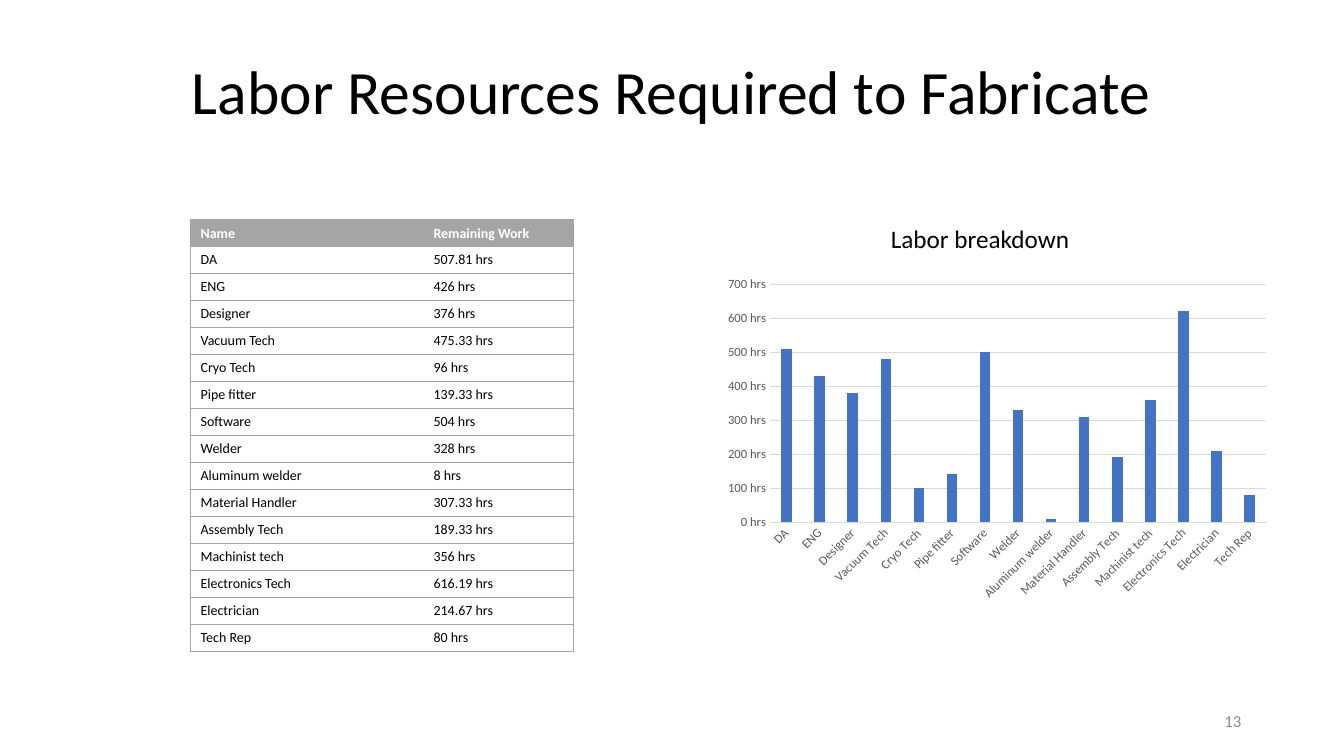
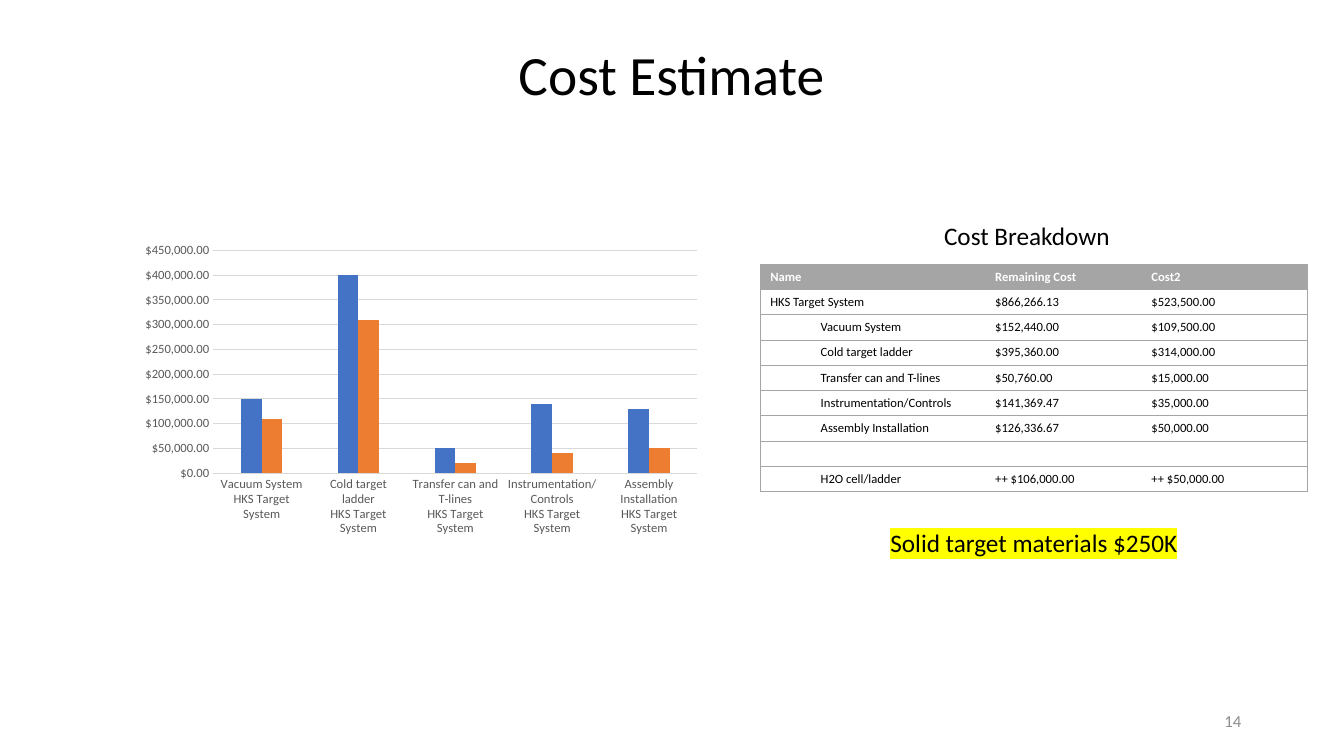
from lxml import etree
from pptx import Presentation
from pptx.chart.data import CategoryChartData
from pptx.dml.color import RGBColor
from pptx.enum.chart import XL_CHART_TYPE, XL_TICK_MARK
from pptx.enum.text import MSO_ANCHOR, MSO_AUTO_SIZE, PP_ALIGN
from pptx.oxml import parse_xml
from pptx.oxml.ns import nsdecls, qn
from pptx.util import Inches, Pt

STACKED, CLUSTERED = XL_CHART_TYPE.COLUMN_STACKED, XL_CHART_TYPE.COLUMN_CLUSTERED
NO_TICK = XL_TICK_MARK.NONE
MIDDLE, NO_FIT = MSO_ANCHOR.MIDDLE, MSO_AUTO_SIZE.NONE
CENTER, RIGHT = PP_ALIGN.CENTER, PP_ALIGN.RIGHT

BLACK = RGBColor(0x00, 0x00, 0x00)
WHITE = RGBColor(0xFF, 0xFF, 0xFF)
GRAY = RGBColor(0xA5, 0xA5, 0xA5)
PALE = RGBColor(0xD9, 0xD9, 0xD9)
DARK = RGBColor(0x59, 0x59, 0x59)
FOOTER = RGBColor(0x8C, 0x8C, 0x8C)
BLUE = RGBColor(0x44, 0x72, 0xC4)
ORANGE = RGBColor(0xED, 0x7D, 0x31)
YELLOW = RGBColor(0xFF, 0xFF, 0x00)
FONT = "Calibri"

LABOR = [
    ("Name", "Remaining Work"),
    ("DA", "507.81 hrs"),
    ("ENG", "426 hrs"),
    ("Designer", "376 hrs"),
    ("Vacuum Tech", "475.33 hrs"),
    ("Cryo Tech", "96 hrs"),
    ("Pipe fitter", "139.33 hrs"),
    ("Software", "504 hrs"),
    ("Welder", "328 hrs"),
    ("Aluminum welder", "8 hrs"),
    ("Material Handler", "307.33 hrs"),
    ("Assembly Tech", "189.33 hrs"),
    ("Machinist tech", "356 hrs"),
    ("Electronics Tech", "616.19 hrs"),
    ("Electrician", "214.67 hrs"),
    ("Tech Rep", "80 hrs"),
]
COSTS = [
    ("Name", "Remaining Cost", "Cost2"),
    ("HKS Target System", "$866,266.13", "$523,500.00"),
    ("Vacuum System", "$152,440.00", "$109,500.00"),
    ("Cold target ladder", "$395,360.00", "$314,000.00"),
    ("Transfer can and T-lines", "$50,760.00", "$15,000.00"),
    ("Instrumentation/Controls", "$141,369.47", "$35,000.00"),
    ("Assembly Installation", "$126,336.67", "$50,000.00"),
    ("", "", ""),
    ("H2O cell/ladder", "++ $106,000.00", "++ $50,000.00"),
]
PARTS = COSTS[2:7]
SYSTEM = COSTS[1][0]

PAGES = [
    dict(
        title="Labor Resources Required to Fabricate", size=44, high=1.08, page="13",
        labels=[("Labor breakdown", 7.03, 2.17, 5.38, None)],
        rows=LABOR, box=(1.89, 2.18, 3.8, 4.27), cols=(2.31, 1.49), text=10, indent=len(LABOR),
        kind=STACKED, area=(7.11, 2.68, 5.56, 3.35), gap=219, overlap=100, turn=-45,
        cats=[name for name, work in LABOR[1:]],
        series=[[round(float(work.split()[0]), -1) for name, work in LABOR[1:]]],
        format='#,##0_ "hrs"', top=700, step=100, plot=None,
    ),
    dict(
        title="Cost Estimate", size=39.6, high=0.74, page="14",
        labels=[("Solid target materials $250K", 8.03, 5.18, 4.45, YELLOW),
                ("Cost Breakdown", 8.63, 2.14, 3.11, None)],
        rows=COSTS, box=(7.54, 2.62, 5.43, 2.26), cols=(2.23, 1.55, 1.65), text=9, indent=2,
        kind=CLUSTERED, area=(1.02, 2.15, 6.08, 3.35), gap=269, overlap=0, turn=0,
        cats=[f"{row[0]}\n{SYSTEM}" for row in PARTS],
        series=[[round(float(row[i].strip("$").replace(",", "")), -4) for row in PARTS]
                for i in (1, 2)],
        format="\\$#,##0.00", top=450000, step=50000,
        plot=dict(x=0.18, y=0.1, w=0.79, h=0.66),
    ),
]


def style(font, size, color, bold=False):
    font.name, font.size, font.bold = FONT, Pt(size), bold
    font.color.rgb = color


def write(slide, text, box, size, color, align):
    """Add a one-line text box and return its paragraph."""
    frame = slide.shapes.add_textbox(*map(Inches, box)).text_frame
    frame.word_wrap = True
    frame.vertical_anchor = MIDDLE
    para = frame.paragraphs[0]
    para.text, para.alignment = text, align
    style(para.font, size, color)
    return para


prs = Presentation()
prs.slide_width, prs.slide_height = Inches(13.33), Inches(7.5)

for page in PAGES:
    slide = prs.slides.add_slide(prs.slide_layouts[5])
    title = slide.shapes.title
    title.left, title.top = Inches(0.91), Inches(0.4)
    title.width, title.height = Inches(11.5), Inches(page["high"])
    frame = title.text_frame
    frame.text = page["title"]
    frame.auto_size, frame.vertical_anchor = NO_FIT, MIDDLE
    para = frame.paragraphs[0]
    para.alignment, para.line_spacing = CENTER, 0.9
    style(para.font, page["size"], BLACK)

    write(slide, page["page"], (9.41, 6.95, 3, 0.4), 12, FOOTER, RIGHT)
    for text, left, top, width, mark in page["labels"]:
        para = write(slide, text, (left, top, width, 0.4), 18, BLACK, CENTER)
        if mark:
            props = para.runs[0].font._element
            light = etree.SubElement(props, qn("a:highlight"))
            etree.SubElement(light, qn("a:srgbClr"), val=str(mark))

    # Table: outer frame and row rules, no inner verticals
    rows, cols = page["rows"], page["cols"]
    table = slide.shapes.add_table(len(rows), len(cols), *map(Inches, page["box"])).table
    for col, width in zip(table.columns, cols):
        col.width = Inches(width)
    for r, row in enumerate(rows):
        for c, text in enumerate(row):
            cell = table.cell(r, c)
            props = cell._tc.get_or_add_tcPr()
            ruled = {"L": c == 0, "R": c == len(cols) - 1, "T": True, "B": True}
            for side, drawn in ruled.items():
                line = etree.SubElement(props, qn(f"a:ln{side}"), w=str(Pt(0.5)))
                fill = etree.SubElement(line, qn("a:solidFill" if drawn else "a:noFill"))
                if drawn:
                    etree.SubElement(fill, qn("a:srgbClr"), val=str(GRAY))
            cell.fill.solid()
            cell.fill.fore_color.rgb = WHITE if r else GRAY
            if c == 0 and r >= page["indent"]:
                cell.margin_left = Inches(0.6)
            para = cell.text_frame.paragraphs[0]
            if text:
                para.text = text
            else:
                etree.SubElement(para._p, qn("a:endParaRPr"), sz=str(page["text"] * 100))
            style(para.font, page["text"], BLACK if r else WHITE, r == 0)

    data = CategoryChartData()
    data.categories = page["cats"]
    for i, vals in enumerate(page["series"], 1):
        data.add_series(f"Series {i}", vals)
    chart = slide.shapes.add_chart(page["kind"], *map(Inches, page["area"]), data).chart
    chart.has_legend = chart.has_title = False
    style(chart.font, 10, BLACK)
    plot = chart.plots[0]
    plot.gap_width, plot.overlap, plot.vary_by_categories = page["gap"], page["overlap"], False
    for series, color in zip(plot.series, (BLUE, ORANGE)):
        series.format.fill.solid()
        series.format.fill.fore_color.rgb = color
    cat, val = chart.category_axis, chart.value_axis
    for axis in (cat, val):
        axis.major_tick_mark = axis.minor_tick_mark = NO_TICK
        style(axis.tick_labels.font, 9, DARK)
    if page["turn"]:
        body = cat._element.find(qn("c:txPr")).find(qn("a:bodyPr"))
        body.set("rot", str(page["turn"] * 60000))
    val.minimum_scale, val.maximum_scale, val.major_unit = 0, page["top"], page["step"]
    val.tick_labels.number_format = page["format"]
    val.tick_labels.number_format_is_linked = False
    val.format.line.fill.background()
    for line in (cat.format.line, val.major_gridlines.format.line):
        line.color.rgb, line.width = PALE, Pt(0.75)
    if page["plot"]:
        spots = "".join(f'<c:{k} val="{v}"/>' for k, v in page["plot"].items())
        layout = parse_xml(
            f'<c:layout {nsdecls("c")}><c:manualLayout><c:layoutTarget val="inner"/>'
            f'<c:xMode val="edge"/><c:yMode val="edge"/>{spots}</c:manualLayout></c:layout>')
        area = chart._chartSpace.chart.plotArea
        for old in area.findall(qn("c:layout")):
            area.remove(old)
        area.insert(0, layout)

prs.save("out.pptx")
